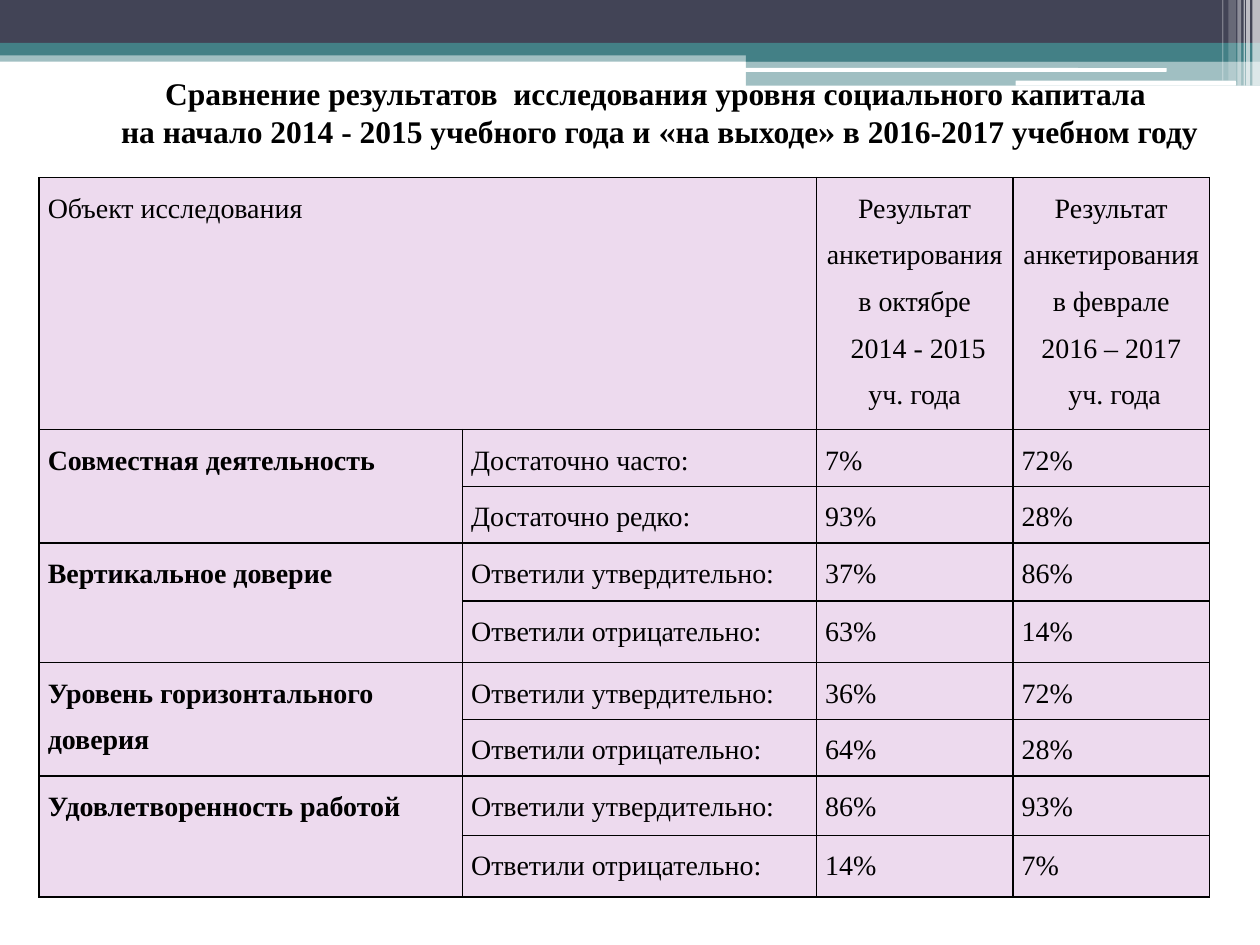
from lxml import etree
from pptx import Presentation
from pptx import util as u
from pptx.dml.color import RGBColor
from pptx.enum import shapes, text
from pptx.oxml import ns

TEAL, NAVY, WHITE = "438086", "424456", "FFFFFF"
RECT = shapes.MSO_SHAPE.RECTANGLE
ROUND = shapes.MSO_SHAPE.ROUNDED_RECTANGLE
LEFT, CENTER, JUSTIFY = text.PP_ALIGN.LEFT, text.PP_ALIGN.CENTER, text.PP_ALIGN.JUSTIFY

# left, top, width, height, colour, opacity in percent
BANDS = [
    (0, 0.4, 10, 0.09, TEAL, 50),
    (0, 0, 10, 0.34, NAVY, 100),
    (0, 0.34, 10, 0.1, TEAL, 100),
    (5.92, 0.39, 4.08, 0.1, TEAL, 100),
    (5.92, 0.48, 4.08, 0.2, TEAL, 50),
]
SLITS = [(5.91, 0.54, 3.35, 0.03), (8.06, 0.64, 1.75, 0.04)]
# left, width, height, opacity in percent
STRIPES = [
    (9.94, 0.06, 0.68, 65), (9.89, 0.03, 0.68, 65), (9.87, 0.01, 0.68, 60),
    (9.82, 0.03, 0.68, 40), (9.75, 0.06, 0.64, 20), (9.7, 0.01, 0.64, 30),
]

TITLE = [
    ["Сравнение результатов  исследования уровня социального капитала "],
    ["на начало 2014 - 2015 учебного года и ", "«", "на выходе", "»", " в 2016-2017 учебном году"],
]

COLS = [3.36, 2.81, 1.56, 1.56]
ROWS = [2, 0.45, 0.45, 0.46, 0.49, 0.45, 0.45, 0.47, 0.49]
HEADERS = {
    0: "Объект исследования",
    2: "Результат анкетирования в октябре\n 2014 - 2015 уч. года",
    3: "Результат анкетирования в феврале 2016 – 2017\n уч. года",
}
OFTEN = ("Достаточно часто:", "Достаточно редко:")
ANSWERS = ("Ответили утвердительно:", "Ответили отрицательно:")
# topic, answer labels, (2014 - 2015, 2016 – 2017) for each answer
TOPICS = [
    ("Совместная деятельность", OFTEN, [(7, 72), (93, 28)]),
    ("Вертикальное доверие", ANSWERS, [(37, 86), (63, 14)]),
    ("Уровень горизонтального доверия", ANSWERS, [(36, 72), (64, 28)]),
    ("Удовлетворенность работой", ANSWERS, [(86, 93), (14, 7)]),
]


def rgb(color):
    return RGBColor.from_string(color)


class Deck:
    font, ink, cell_fill = "Times New Roman", "000000", "EDDAEE"

    def __init__(self):
        self.prs = Presentation()
        self.prs.slide_width, self.prs.slide_height = u.Inches(10), u.Inches(7.5)
        self.s = self.prs.slides.add_slide(self.prs.slide_layouts[5])

    def style(self, r, size, bold, font=None):
        r.font.name, r.font.size, r.font.bold = font or self.font, u.Pt(size), bold
        r.font.color.rgb = rgb(self.ink)

    def bar(self, left, top, width, height, color, opacity=100, kind=RECT):
        sp = self.s.shapes.add_shape(kind, *map(u.Inches, (left, top, width, height)))
        sp.shadow.inherit = False
        sp.line.fill.background()
        sp.fill.solid()
        sp.fill.fore_color.rgb = rgb(color)
        if opacity < 100:
            clr = sp.element.spPr.find(".//" + ns.qn("a:srgbClr"))
            etree.SubElement(clr, ns.qn("a:alpha"), val=str(opacity * 1000))

    def title(self, left, top, width, height, lines):
        sp = self.s.shapes.title
        sp.left, sp.top, sp.width, sp.height = map(u.Inches, (left, top, width, height))
        tf = sp.text_frame
        tf.word_wrap, tf.auto_size = True, text.MSO_AUTO_SIZE.NONE
        tf.vertical_anchor = text.MSO_ANCHOR.TOP
        tf.margin_left = tf.margin_right = u.Inches(0.1)
        tf.margin_top, tf.margin_bottom = u.Inches(0.36), 0
        for i, parts in enumerate(lines):
            p = tf.add_paragraph() if i else tf.paragraphs[0]
            p.alignment = CENTER
            for part in parts:
                r = p.add_run()
                r.text = part
                self.style(r, 18, True, "Cambria" if part in "«»" else None)
        self.s.shapes.element.append(sp.element)  # bring to front

    def table(self, left, top, cols, rows):
        frame = self.s.shapes.add_table(
            len(rows), len(cols), *map(u.Inches, (left, top, sum(cols), sum(rows))))
        tbl = frame.table
        tbl.first_row = tbl.horz_banding = False
        for col, width in zip(tbl.columns, cols):
            col.width = u.Inches(width)
        for row, height in zip(tbl.rows, rows):
            row.height = u.Inches(height)
        for cell in tbl.iter_cells():
            self.border(cell)
            cell.fill.solid()
            cell.fill.fore_color.rgb = rgb(self.cell_fill)
            cell.margin_left = cell.margin_right = u.Inches(0.07)
            cell.margin_top = cell.margin_bottom = 0
        return tbl

    def border(self, cell):
        tc_pr = cell._tc.get_or_add_tcPr()
        for side in ("lnL", "lnR", "lnT", "lnB"):
            ln = etree.SubElement(tc_pr, ns.qn("a:" + side), w=str(u.Pt(1)))
            fill = etree.SubElement(ln, ns.qn("a:solidFill"))
            etree.SubElement(fill, ns.qn("a:srgbClr"), val=self.ink)

    def cell_text(self, cell, words, align=JUSTIFY, bold=False):
        cell.text_frame.text = words
        for p in cell.text_frame.paragraphs:
            p.alignment, p.line_spacing = align, 1.5
            for r in p.runs:
                self.style(r, 16, bold)


def main():
    deck = Deck()
    for band in BANDS:
        deck.bar(*band)
    for slit in SLITS:
        deck.bar(*slit, WHITE, kind=ROUND)
    for left, width, height, opacity in STRIPES:
        deck.bar(left, 0, width, height, WHITE, opacity)

    tbl = deck.table(0.31, 1.41, COLS, ROWS)
    tbl.cell(0, 0).merge(tbl.cell(0, 1))
    for col, words in HEADERS.items():
        deck.cell_text(tbl.cell(0, col), words, CENTER if col else JUSTIFY)
    for i, (topic, labels, results) in enumerate(TOPICS):
        top = 1 + 2 * i
        tbl.cell(top, 0).merge(tbl.cell(top + 1, 0))
        deck.cell_text(tbl.cell(top, 0), topic, LEFT, bold=True)
        for row, (label, values) in enumerate(zip(labels, results), top):
            deck.cell_text(tbl.cell(row, 1), label)
            for col, value in enumerate(values, 2):
                deck.cell_text(tbl.cell(row, col), f"{value}%")

    deck.title(0.78, 0.23, 8.91, 1.24, TITLE)
    deck.prs.save("out.pptx")


if __name__ == "__main__":
    main()
